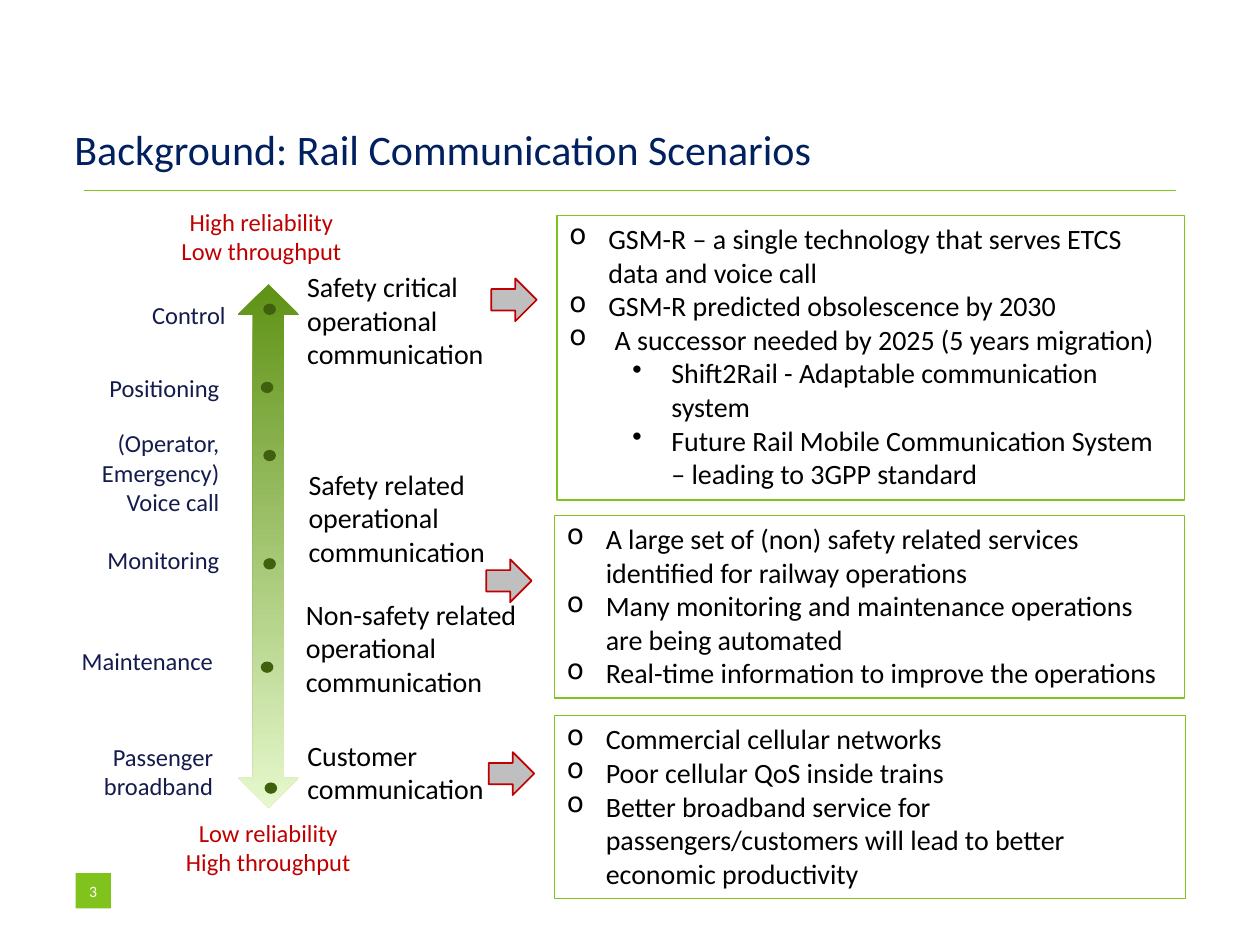
from dataclasses import dataclass
from typing import NamedTuple, Optional

from lxml.etree import SubElement
from pptx import Presentation
from pptx.dml.color import RGBColor as RGB
from pptx.enum.shapes import MSO_CONNECTOR as Connector, MSO_SHAPE as Preset
from pptx.enum.text import MSO_ANCHOR as Anchor, PP_ALIGN as Align
from pptx.oxml.ns import qn
from pptx.util import Inches, Pt


@dataclass(frozen=True)
class Theme:
    font: str = "Calibri"
    title: str = "002060"
    green: str = "7FC31C"
    arrow_top: str = "5F9215"
    arrow_bottom: str = "E6F8CD"
    dot: str = "3F610E"
    red: str = "C00000"
    grey: str = "BFBFBF"
    navy: str = "141B4D"
    black: str = "000000"
    white: str = "FFFFFF"
    title_size: float = 24
    body_size: float = 16
    label_size: float = 14
    number_size: float = 9


class Area(NamedTuple):
    left: float
    top: float
    width: float
    height: float


class Item(NamedTuple):
    text: str
    level: int = 0


class Label(NamedTuple):
    text: str
    area: Area


class Panel(NamedTuple):
    area: Area
    items: list[Item]


THEME = Theme()
BULLETS = ("o", "•")

AXIS_ENDS = [
    Label("High reliability\nLow throughput", Area(1.09, 1.59, 1.97, 0.57)),
    Label("Low reliability\nHigh throughput", Area(1.35, 6.44, 1.56, 0.57)),
]
CATEGORIES = [
    Label("Safety critical operational communication", Area(2.34, 2.09, 1.97, 0.91)),
    Label("Safety related operational communication", Area(2.35, 3.66, 1.82, 0.91)),
    Label("Non-safety related operational communication", Area(2.33, 4.69, 2.06, 0.91)),
    Label("Customer communication", Area(2.34, 5.81, 1.89, 0.64)),
]
SERVICES = [
    Label("Control", Area(0.58, 2.33, 1.31, 0.34)),
    Label("Positioning", Area(0.5, 2.91, 1.34, 0.34)),
    Label("(Operator, Emergency) Voice call", Area(0.26, 3.35, 1.58, 0.81)),
    Label("Monitoring", Area(0.25, 4.28, 1.59, 0.34)),
    Label("Maintenance", Area(0.21, 5.08, 1.58, 0.34)),
    Label("Passenger broadband", Area(0.31, 5.84, 1.48, 0.57)),
]
PANELS = [
    Panel(Area(4.42, 1.71, 4.98, 2.26), [
        Item("GSM-R – a single technology that serves ETCS data and voice call"),
        Item("GSM-R predicted obsolescence by 2030"),
        Item(" A successor needed by 2025 (5 years migration)"),
        Item("Shift2Rail - Adaptable communication system", 1),
        Item("Future Rail Mobile Communication System – leading to 3GPP standard", 1),
    ]),
    Panel(Area(4.4, 4.09, 5, 1.45), [
        Item("A large set of (non) safety related services identified for railway operations"),
        Item("Many monitoring and maintenance operations are being automated"),
        Item("Real-time information to improve the operations"),
    ]),
    Panel(Area(4.4, 5.68, 5.01, 1.45), [
        Item("Commercial cellular networks"),
        Item("Poor cellular QoS inside trains"),
        Item("Better broadband service for passengers/customers will lead to better "
             "economic productivity"),
    ]),
]
POINTERS = [(3.9, 2.21), (3.86, 4.44), (3.88, 5.97)]
DOTS = [(2.09, 2.41), (2.07, 3.03), (2.09, 3.57), (2.09, 4.43), (2.07, 5.25), (2.1, 6.21)]


def inches(area: Area) -> list[Inches]:
    return [Inches(value) for value in area]


def add_bullet(para, level: int) -> None:
    """Give a paragraph the hanging bullet of its level."""
    para.level = level
    props = para._p.get_or_add_pPr()
    props.set("marL", str(Inches(0.31 + 0.5 * level)))
    props.set("indent", str(-Inches(0.31)))
    SubElement(props, qn("a:buChar")).set("char", BULLETS[level])


def write(box, items: list[Item], *, size: float, color: str, align: Align = Align.LEFT,
          anchor: Anchor = Anchor.TOP, inset: Optional[float] = None,
          bullets: bool = False) -> None:
    """Fill a box with one formatted paragraph per item."""
    frame = box.text_frame
    frame.word_wrap = True
    frame.vertical_anchor = anchor
    if inset is not None:
        frame.margin_left = frame.margin_right = Inches(inset)
        frame.margin_top = frame.margin_bottom = Inches(inset)
    for index, item in enumerate(items):
        para = frame.paragraphs[0] if index == 0 else frame.add_paragraph()
        para.alignment = align
        if bullets:
            add_bullet(para, item.level)
        span = para.add_run()
        span.text = item.text
        span.font.name = THEME.font
        span.font.size = Pt(size)
        span.font.color.rgb = RGB.from_string(color)


def add_text(page, label: Label, **style) -> None:
    box = page.shapes.add_textbox(*inches(label.area))
    write(box, [Item(line) for line in label.text.split("\n")], **style)


def add_block(page, preset: Preset, area: Area, *, fill: Optional[str] = None,
              line: Optional[str] = None, weight: float = 0.75):
    """Add a preset shape with a plain fill and outline, or none."""
    block = page.shapes.add_shape(preset, *inches(area))
    block.shadow.inherit = False
    if fill:
        block.fill.solid()
        block.fill.fore_color.rgb = RGB.from_string(fill)
    else:
        block.fill.background()
    if line:
        block.line.color.rgb = RGB.from_string(line)
        block.line.width = Pt(weight)
    else:
        block.line.fill.background()
    return block


def add_rule(page) -> None:
    rule = page.shapes.add_connector(
        Connector.STRAIGHT, Inches(0.67), Inches(1.51), Inches(9.33), Inches(1.51))
    rule.line.color.rgb = RGB.from_string(THEME.green)
    rule.line.width = Pt(0.6)
    SubElement(rule._element.spPr, qn("a:effectLst"))


def add_axis(page) -> None:
    """Add the vertical double arrow that fades downwards."""
    axis = add_block(page, Preset.LEFT_RIGHT_ARROW, Area(0.05, 4.09, 4.16, 0.49))
    axis.rotation = 90
    axis.fill.gradient()
    axis.fill.gradient_angle = 0
    for stop, color in zip(axis.fill.gradient_stops, (THEME.arrow_top, THEME.arrow_bottom)):
        stop.color.rgb = RGB.from_string(color)


def main() -> None:
    deck = Presentation()
    deck.slide_width, deck.slide_height = Inches(10), Inches(7.5)
    page = deck.slides.add_slide(deck.slide_layouts[6])

    # Title, rule and page number
    add_rule(page)
    add_text(page, Label("Background: Rail Communication Scenarios", Area(0.59, 0.91, 7.95, 0.47)),
             size=THEME.title_size, color=THEME.title, anchor=Anchor.BOTTOM, inset=0)
    number = add_block(page, Preset.RECTANGLE, Area(0.6, 6.93, 0.28, 0.28), fill=THEME.green)
    write(number, [Item("3")], size=THEME.number_size, color=THEME.white,
          align=Align.CENTER, anchor=Anchor.MIDDLE, inset=0.04)

    # Axis and its labels
    add_axis(page)
    for label in AXIS_ENDS:
        add_text(page, label, size=THEME.label_size, color=THEME.red, align=Align.CENTER)
    for label in CATEGORIES:
        add_text(page, label, size=THEME.body_size, color=THEME.black)
    for label in SERVICES:
        add_text(page, label, size=THEME.label_size, color=THEME.navy, align=Align.RIGHT)

    # Panels, the arrows to them, and the dots on the axis
    for panel in PANELS:
        box = add_block(page, Preset.RECTANGLE, panel.area, line=THEME.green)
        write(box, panel.items, size=THEME.body_size, color=THEME.black, bullets=True)
    for left, top in POINTERS:
        add_block(page, Preset.RIGHT_ARROW, Area(left, top, 0.36, 0.34),
                  fill=THEME.grey, line=THEME.red, weight=1)
    for left, top in DOTS:
        add_block(page, Preset.OVAL, Area(left, top, 0.1, 0.09), fill=THEME.dot)

    deck.save("out.pptx")


if __name__ == "__main__":
    main()
